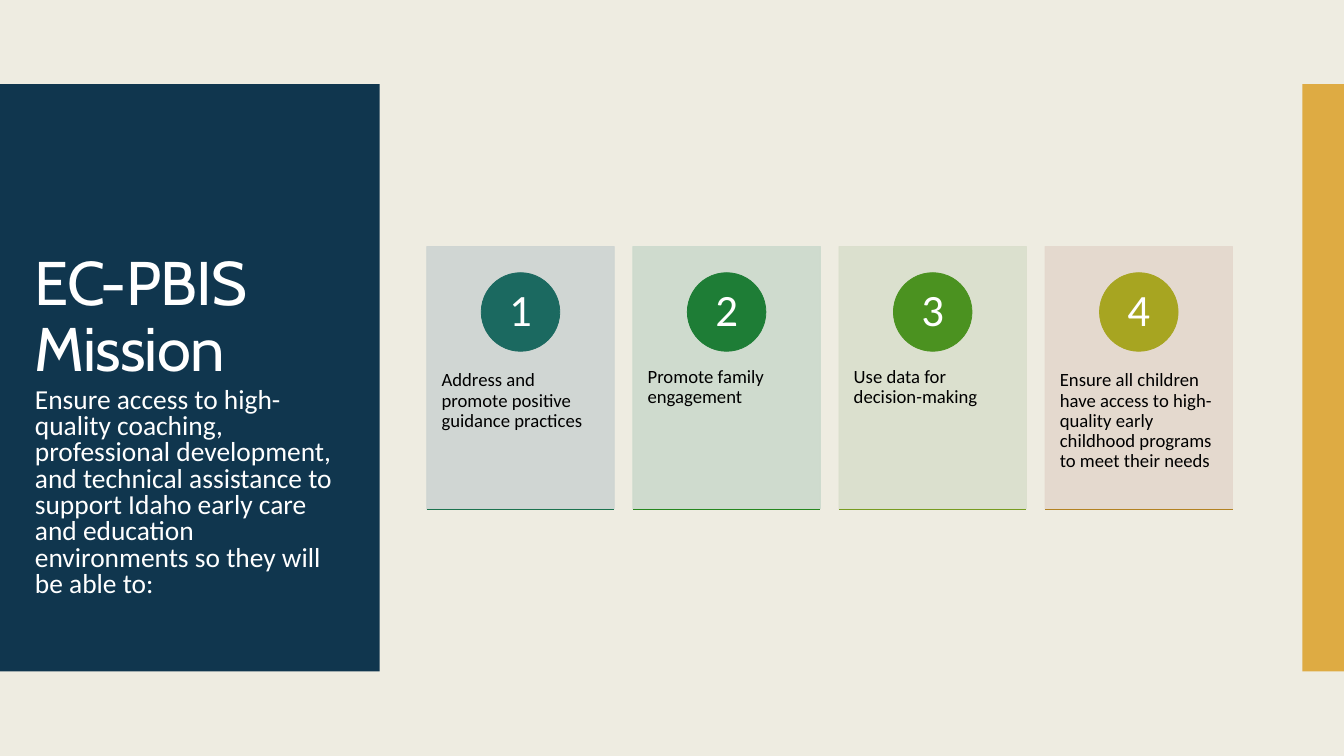
from lxml import etree
from pptx import Presentation
from pptx.dml.color import RGBColor
from pptx.enum.shapes import MSO_CONNECTOR, MSO_SHAPE
from pptx.enum.text import MSO_ANCHOR, PP_ALIGN
from pptx.oxml.ns import qn
from pptx.util import Cm, Pt

RECTANGLE, OVAL = MSO_SHAPE.RECTANGLE, MSO_SHAPE.OVAL
STRAIGHT = MSO_CONNECTOR.STRAIGHT
TOP, MIDDLE, BOTTOM = MSO_ANCHOR.TOP, MSO_ANCHOR.MIDDLE, MSO_ANCHOR.BOTTOM
LEFT, CENTER = PP_ALIGN.LEFT, PP_ALIGN.CENTER

CREAM = RGBColor(0xEE, 0xEC, 0xE1)
NAVY = RGBColor(0x10, 0x36, 0x4E)
GOLD = RGBColor(0xDE, 0xAB, 0x43)
WHITE = RGBColor(0xFF, 0xFF, 0xFF)
BLACK = RGBColor(0x00, 0x00, 0x00)
MIST, TEAL, PINE = (RGBColor(0xCD, 0xD4, 0xD2), RGBColor(0x1B, 0x69, 0x60),
                    RGBColor(0x1C, 0x73, 0x4E))
MINT, GREEN, FERN = (RGBColor(0xCC, 0xDA, 0xCD), RGBColor(0x1E, 0x7D, 0x36),
                     RGBColor(0x26, 0x87, 0x1F))
SAGE, LEAF, MOSS = (RGBColor(0xDA, 0xDF, 0xCC), RGBColor(0x4B, 0x92, 0x20),
                    RGBColor(0x77, 0x9C, 0x21))
BLUSH, OLIVE, OCHRE = (RGBColor(0xE4, 0xD8, 0xCD), RGBColor(0xA7, 0xA5, 0x21),
                       RGBColor(0xB2, 0x82, 0x22))

GOALS = [
    ("Address and promote positive guidance practices", MIST, TEAL, PINE),
    ("Promote family engagement", MINT, GREEN, FERN),
    ("Use data for decision-making", SAGE, LEAF, MOSS),
    ("Ensure all children have access to high-quality early childhood "
     "programs to meet their needs", BLUSH, OLIVE, OCHRE),
]
MISSION = ("Ensure access to high-quality coaching, professional development, "
           "and technical assistance to support Idaho early care and education "
           "environments so they will be able to:")

BAND_TOP, BAND_HEIGHT = 3.18, 22.2
CARD_LEFT, CARD_TOP, CARD_PITCH = 16.13, 9.32, 7.79
CARD_WIDTH, CARD_HEIGHT = 7.09, 9.91
BADGE_SIZE = 2.97


class MissionSlide:
    """Holds the slide and its style; all lengths are in centimetres."""

    heading_font, body_font = "Cabin", "Calibri"
    line_width = Pt(0.85)

    def __init__(self, slide):
        self.slide = slide
        background = slide.background.fill
        background.solid()
        background.fore_color.rgb = CREAM

    def block(self, kind, left, top, width, height, color, outlined=False, opacity=100):
        shape = self.slide.shapes.add_shape(
            kind, Cm(left), Cm(top), Cm(width), Cm(height))
        shape.shadow.inherit = False
        shape.fill.solid()
        shape.fill.fore_color.rgb = color
        if outlined:
            shape.line.color.rgb = color
            shape.line.width = self.line_width
        else:
            shape.line.fill.background()
        if opacity < 100:
            for color_xml in shape._element.spPr.iter(qn("a:srgbClr")):
                etree.SubElement(color_xml, qn("a:alpha"), val=str(opacity * 1000))
        return shape

    def rule(self, left, top, width, color):
        line = self.slide.shapes.add_connector(
            STRAIGHT, Cm(left), Cm(top), Cm(left + width), Cm(top))
        line.line.color.rgb = color
        line.line.width = self.line_width
        etree.SubElement(line._element.spPr, qn("a:effectLst"))

    def fill_text(self, frame, text, size, color, font=body_font, anchor=TOP,
                  align=LEFT, spacing=0.9, margins=(0.25, 0.13)):
        """Fill a text frame; margins are (sides, top and bottom)."""
        side, end = map(Cm, margins)
        frame_format = {"word_wrap": True, "vertical_anchor": anchor,
                        "margin_left": side, "margin_right": side,
                        "margin_top": end, "margin_bottom": end}
        for name, value in frame_format.items():
            setattr(frame, name, value)
        paragraph = frame.paragraphs[0]
        paragraph.alignment, paragraph.line_spacing = align, spacing
        run = paragraph.add_run()
        run.text = text
        for name, value in {"name": font, "size": Pt(size)}.items():
            setattr(run.font, name, value)
        run.font.color.rgb = color
        return run

    def text(self, left, top, width, height, *content, **style):
        box = self.slide.shapes.add_textbox(Cm(left), Cm(top), Cm(width), Cm(height))
        return self.fill_text(box.text_frame, *content, **style)

    def goal_card(self, number, left, goal, tint, badge_color, rule_color):
        self.block(RECTANGLE, left, CARD_TOP, CARD_WIDTH, CARD_HEIGHT, tint,
                   outlined=True, opacity=90)
        self.text(left, 13.11, CARD_WIDTH, 5.94, goal, 20, BLACK, margins=(0.56, 0.91))
        badge = self.block(OVAL, left + (CARD_WIDTH - BADGE_SIZE) / 2, CARD_TOP + 0.99,
                           BADGE_SIZE, BADGE_SIZE, badge_color, outlined=True)
        self.fill_text(badge.text_frame, str(number), 48, WHITE, anchor=MIDDLE,
                       align=CENTER, margins=(0.23, 0.03))
        self.rule(left, CARD_TOP + CARD_HEIGHT + 0.02, CARD_WIDTH, rule_color)


def main():
    deck = Presentation()
    deck.slide_width, deck.slide_height = Cm(50.8), Cm(28.58)
    page = MissionSlide(deck.slides.add_slide(deck.slide_layouts[6]))

    page.block(RECTANGLE, 0, BAND_TOP, 14.35, BAND_HEIGHT, NAVY)
    page.block(RECTANGLE, 49.23, BAND_TOP, 1.57, BAND_HEIGHT, GOLD)
    title = page.text(1.07, 4.78, 11.81, 9.91, "EC-PBIS Mission", 66, WHITE,
                      font=page.heading_font, anchor=BOTTOM)
    title.font._element.set("spc", "-90")

    for index, goal in enumerate(GOALS):
        page.goal_card(index + 1, CARD_LEFT + index * CARD_PITCH, *goal)

    page.text(1.07, 14.55, 11.81, 9.68, MISSION, 29.4, WHITE, spacing=0.8)
    deck.save("out.pptx")


if __name__ == "__main__":
    main()
